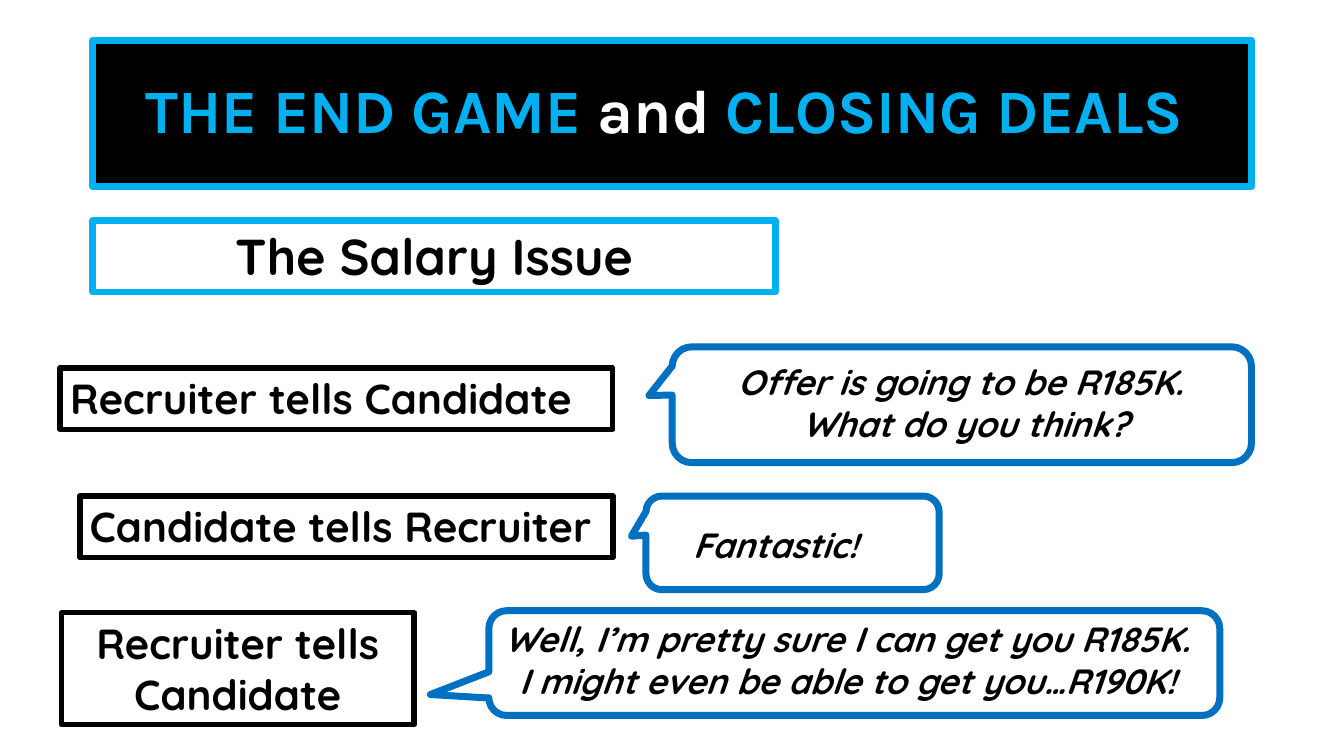
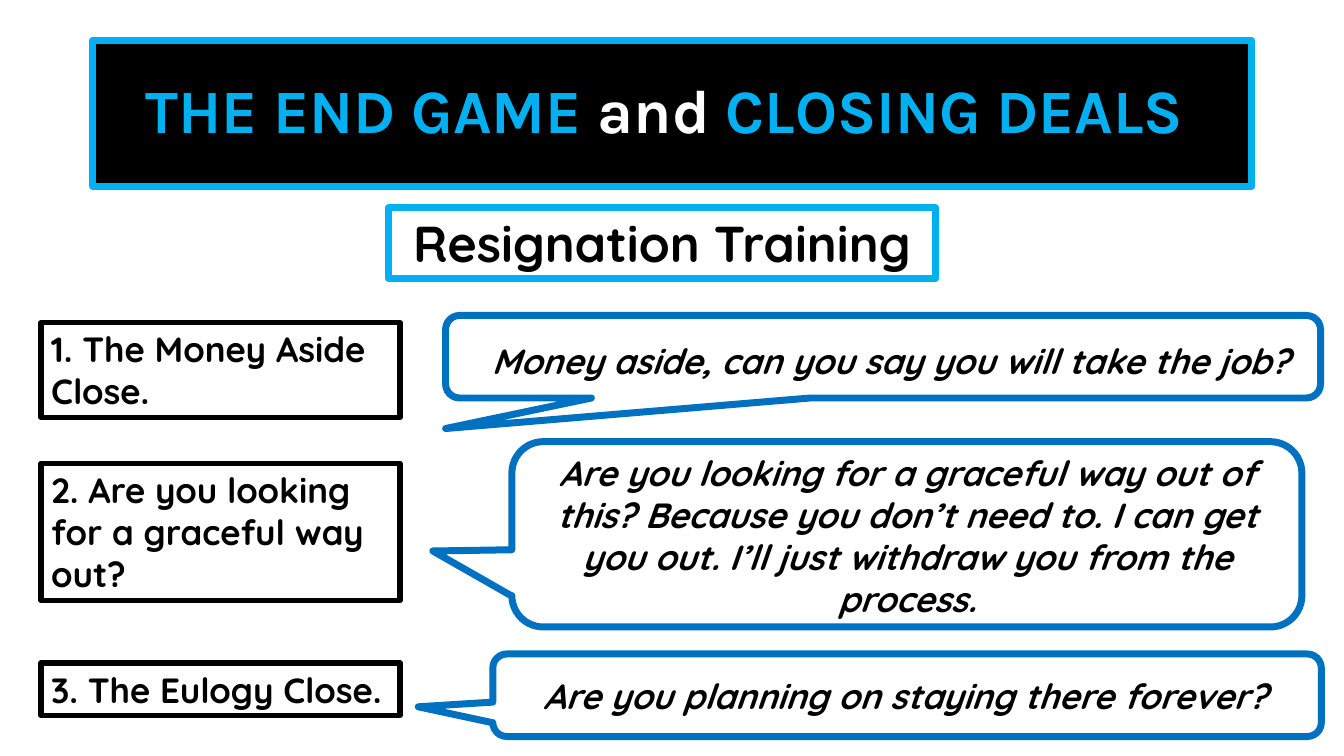
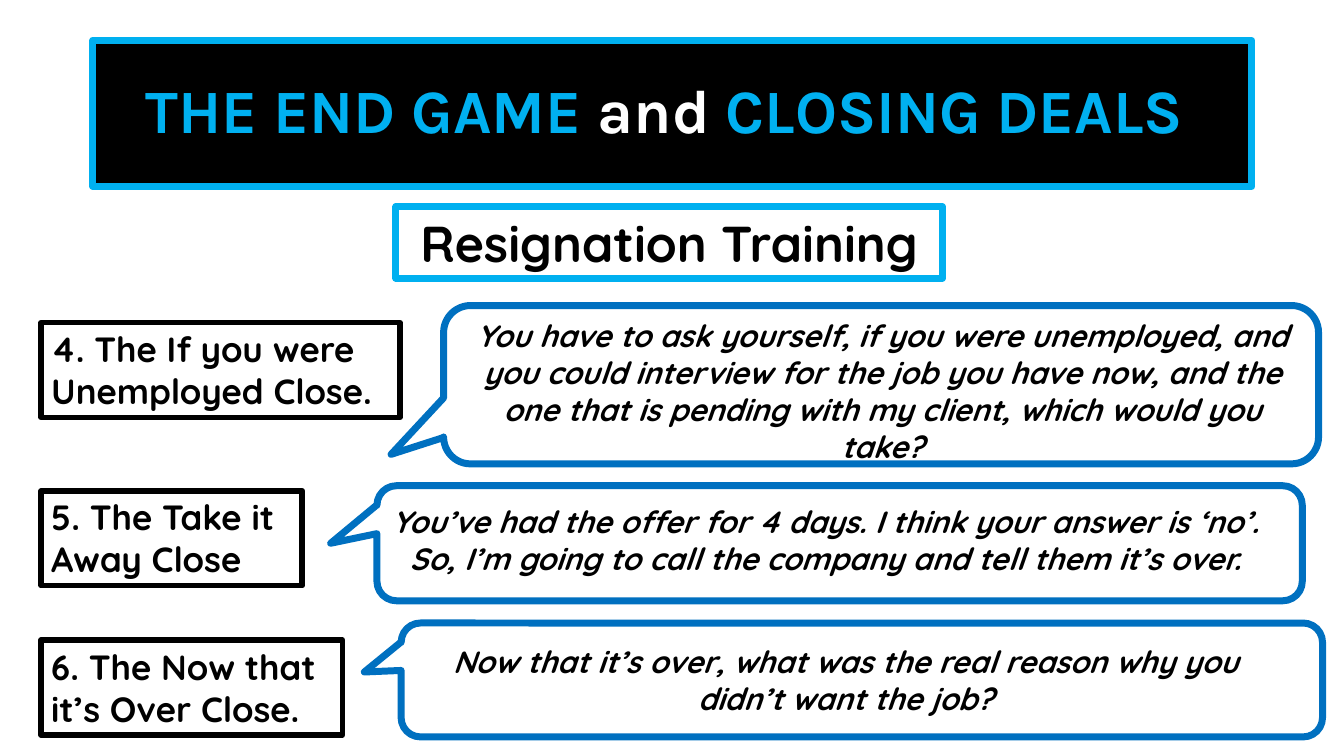
"""Build three training slides on closing deals, with labels and speech callouts."""
import pptx
import pptx.dml.color
import pptx.enum.shapes
import pptx.enum.text
import pptx.util

Cm = pptx.util.Cm
Pt = pptx.util.Pt
CENTER = pptx.enum.text.PP_ALIGN.CENTER
LEFT = pptx.enum.text.PP_ALIGN.LEFT
MIDDLE = pptx.enum.text.MSO_ANCHOR.MIDDLE
TOP = pptx.enum.text.MSO_ANCHOR.TOP
GROW = pptx.enum.text.MSO_AUTO_SIZE.SHAPE_TO_FIT_TEXT
FIXED = pptx.enum.text.MSO_AUTO_SIZE.NONE
CALLOUT = pptx.enum.shapes.MSO_SHAPE.ROUNDED_RECTANGULAR_CALLOUT

COLORS = {"black": "000000", "white": "FFFFFF", "sky": "00B0F0", "blue": "0070C0"}
TITLE_BOX = (2.34, 1.02, 29.21, 3.68)
TITLE_RUNS = [("THE END GAME ", "sky"), ("and", "white"), (" CLOSING DEALS ", "sky")]
TITLE_FONT = {"name": "Karla", "size": Pt(44), "bold": True}
HEADING_FONT = {"name": "Quicksand", "size": Pt(36), "bold": True}
TITLE_FRAME = {"word_wrap": True, "auto_size": FIXED, "vertical_anchor": MIDDLE}
BODY_FRAME = {"word_wrap": True, "auto_size": GROW, "vertical_anchor": TOP}

SLIDES = [
    {
        "heading": ("The Salary Issue", (2.34, 5.56, 17.2, 1.8)),
        "label_size": 30,
        "speech_size": 25,
        "labels": [
            ("Recruiter tells Candidate", (1.52, 9.27, 13.92, 1.55), LEFT),
            ("Candidate tells Recruiter", (2.01, 12.5, 13.44, 1.55), LEFT),
            ("Recruiter tells Candidate", (1.55, 15.44, 8.89, 2.82), CENTER),
        ],
        "callouts": [
            ((16.94, 8.74, 14.6, 2.92), (-0.54, -0.08)),
            ((16.28, 12.5, 7.39, 2.36), (-0.55, -0.07)),
            ((12.32, 15.39, 18.42, 2.64), (-0.58, 0.3)),
        ],
        "speeches": [
            ("Offer is going to be R185K. \nWhat do you think?", (16.28, 8.97, 16.1, 2.39)),
            ("Fantastic!", (14.99, 13.06, 9.09, 1.32)),
            ("Well, I’m pretty sure I can get you R185K. "
             "I might even be able to get you…R190K!", (12.32, 15.44, 18.06, 2.39)),
        ],
    },
    {
        "heading": ("Resignation Training", (9.8, 5.23, 13.77, 1.8)),
        "label_size": 25,
        "speech_size": 25,
        "labels": [
            ("1. The Money Aside Close.", (1.04, 8.13, 9.04, 2.39), LEFT),
            ("2. Are you looking for a graceful way out?", (1.04, 11.68, 9.04, 3.45), LEFT),
            ("3. The Eulogy Close.", (1.04, 16.71, 9.04, 1.32), LEFT),
        ],
        "callouts": [
            ((11.23, 7.95, 22.05, 2.08), (-0.5, 0.87)),
            ((12.9, 11.13, 19.91, 4.67), (-0.6, 0.09)),
            ((12.42, 16.48, 20.88, 2.08), (-0.59, 0.14)),
        ],
        "speeches": [
            ("Money aside, can you say you will take the job?", (11.56, 8.43, 21.77, 1.32)),
            ("Are you looking for a graceful way out of this? Because you don’t need to. "
             "I can get you out. I’ll just withdraw you from the process.",
             (13.74, 11.25, 18.24, 4.52)),
            ("Are you planning on staying there forever?", (13.11, 16.87, 19.41, 1.32)),
        ],
    },
    {
        "heading": ("Resignation Training", (9.98, 5.21, 13.77, 1.8)),
        "label_size": 25,
        "speech_size": 22,
        "labels": [
            ("4. The If you were Unemployed Close.", (1.04, 8.13, 9.04, 2.39), LEFT),
            ("5. The Take it Away Close", (1.04, 12.37, 6.58, 2.39), LEFT),
            ("6. The Now that it’s Over Close.", (1.04, 16.13, 7.59, 2.39), LEFT),
        ],
        "callouts": [
            ((11.18, 7.7, 22.05, 3.99), (-0.56, 0.44)),
            ((9.5, 12.24, 23.32, 2.9), (-0.55, 0)),
            ((10.11, 15.7, 23.22, 2.87), (-0.54, -0.07)),
        ],
        "speeches": [
            ("You have to ask yourself, if you were unemployed, and you could interview "
             "for the job you have now, and the one that is pending with my client, "
             "which would you take?", (11.35, 7.85, 21.77, 4.01)),
            ("You’ve had the offer for 4 days. I think your answer is ‘no’. "
             "So, I’m going to call the company and tell them it’s over.",
             (9.5, 12.55, 22.61, 2.13)),
            ("Now that it’s over, what was the real reason why you didn’t want the job?",
             (10.11, 16.08, 22.4, 2.13)),
        ],
    },
]


def set_outline(shape, color, width):
    shape.line.color.rgb = pptx.dml.color.RGBColor.from_string(COLORS[color])
    shape.line.width = Pt(width)


def add_text(slide, box, paragraphs, font, align=CENTER, frame=BODY_FRAME):
    text_box = slide.shapes.add_textbox(*map(Cm, box))
    for key, value in frame.items():
        setattr(text_box.text_frame, key, value)
    for index, runs in enumerate(paragraphs):
        if index:
            paragraph = text_box.text_frame.add_paragraph()
        else:
            paragraph = text_box.text_frame.paragraphs[0]
        paragraph.alignment = align
        for words, color in runs:
            run = paragraph.add_run()
            run.text = words
            run.font.color.rgb = pptx.dml.color.RGBColor.from_string(COLORS[color])
            for key, value in font.items():
                setattr(run.font, key, value)
    return text_box


deck = pptx.Presentation()
deck.slide_width, deck.slide_height = Cm(33.87), Cm(19.05)

for content in SLIDES:
    slide = deck.slides.add_slide(deck.slide_layouts[6])

    title = add_text(slide, TITLE_BOX, [TITLE_RUNS], TITLE_FONT, frame=TITLE_FRAME)
    title.text_frame.paragraphs[0].line_spacing = 0.9
    title.fill.solid()
    title.fill.fore_color.rgb = pptx.dml.color.RGBColor.from_string(COLORS["black"])
    set_outline(title, "sky", 5)

    words, box = content["heading"]
    heading = add_text(slide, box, [[(words, "black")]], HEADING_FONT)
    set_outline(heading, "sky", 5)

    for box, pointer in content["callouts"]:
        callout = slide.shapes.add_shape(CALLOUT, *map(Cm, box))
        callout.shadow.inherit = False
        callout.fill.background()
        set_outline(callout, "blue", 5)
        for index, value in enumerate((*pointer, 0.17)):
            callout.adjustments[index] = value

    speech_font = HEADING_FONT | {"size": Pt(content["speech_size"]), "italic": True}
    for words, box in content["speeches"]:
        add_text(slide, box, [[(line, "black")] for line in words.split("\n")], speech_font)

    label_font = HEADING_FONT | {"size": Pt(content["label_size"])}
    for words, box, align in content["labels"]:
        label = add_text(slide, box, [[(words, "black")]], label_font, align)
        set_outline(label, "black", 4)

deck.save("out.pptx")
